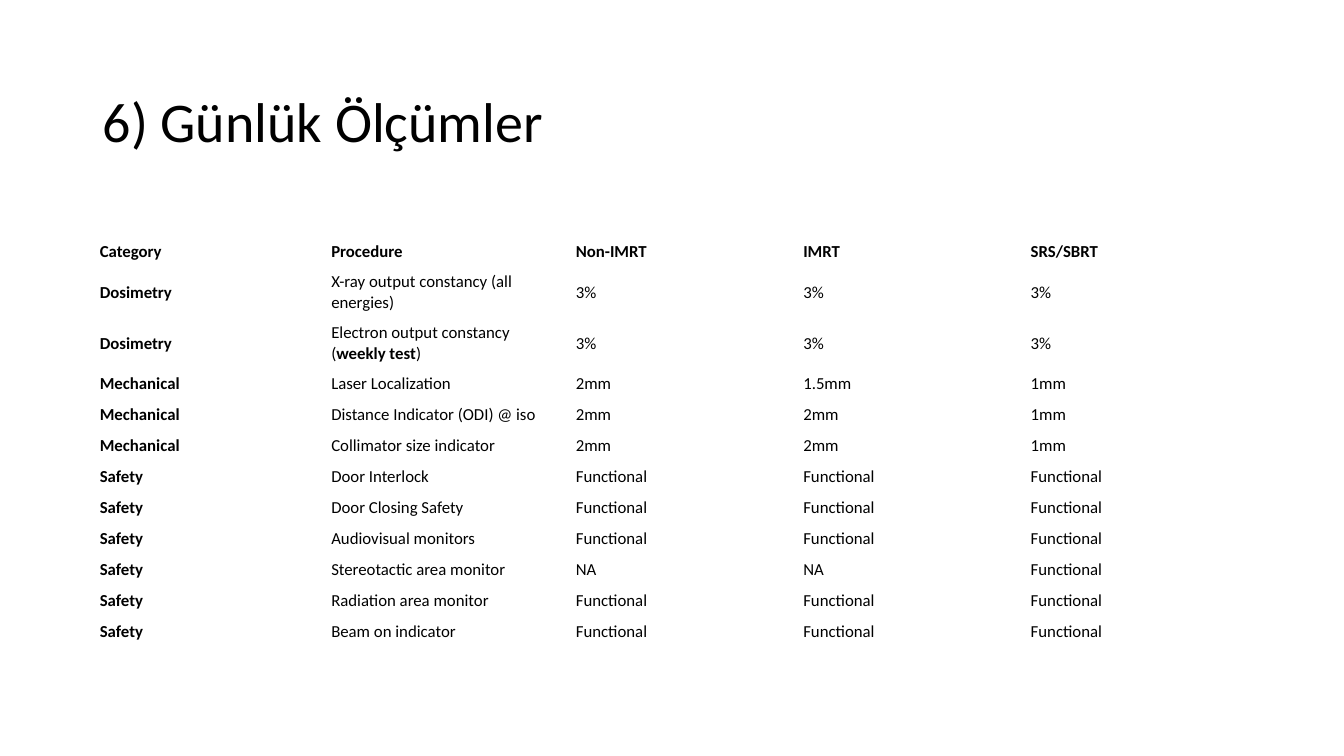
from lxml import etree
from pptx import Presentation, util as u
from pptx.dml.color import RGBColor
from pptx.enum import text
from pptx.oxml import ns

SLIDE_W, SLIDE_H = 13.33, 7.5
MARGIN = 0.92
CONTENT_W = SLIDE_W - 2 * MARGIN
BLACK, WHITE = "000000", "FFFFFF"

COLUMN_WEIGHTS = (2.3, 2.43, 2.26, 2.26, 2.26)
TALL_ROW = 1.65  # height of a two-line row, in single rows
HEADER = ("Category", "Procedure", "Non-IMRT", "IMRT", "SRS/SBRT")
FUNCTIONAL = ("Functional",) * 3

# Category, procedure as (text, bold) runs, and the three tolerances
CHECKS = [
    ("Dosimetry", [("X-ray output constancy (all energies)", False)], ("3%",) * 3),
    ("Dosimetry", [("Electron output constancy (", False), ("weekly test", True),
                   (")", False)], ("3%",) * 3),
    ("Mechanical", [("Laser Localization", False)], ("2mm", "1.5mm", "1mm")),
    ("Mechanical", [("Distance Indicator (ODI) @ iso", False)], ("2mm", "2mm", "1mm")),
    ("Mechanical", [("Collimator size indicator", False)], ("2mm", "2mm", "1mm")),
    ("Safety", [("Door Interlock", False)], FUNCTIONAL),
    ("Safety", [("Door Closing Safety", False)], FUNCTIONAL),
    ("Safety", [("Audiovisual monitors", False)], FUNCTIONAL),
    ("Safety", [("Stereotactic area monitor", False)], ("NA", "NA", "Functional")),
    ("Safety", [("Radiation area monitor", False)], FUNCTIONAL),
    ("Safety", [("Beam on indicator", False)], FUNCTIONAL),
]


def color(hex_value):
    return RGBColor.from_string(hex_value)


def apply_format(target, values):
    for name, value in values.items():
        setattr(target, name, value)


def add_run(paragraph, words, size, bold=False):
    run = paragraph.add_run()
    run.text = words
    apply_format(run.font, {"name": "Calibri", "size": u.Pt(size), "bold": bold})
    run.font.color.rgb = color(BLACK)


def set_borders(cell, hex_value, width):
    properties = cell._tc.get_or_add_tcPr()
    for index, side in enumerate(("lnL", "lnR", "lnT", "lnB")):
        line = etree.Element(ns.qn(f"a:{side}"), w=str(u.Pt(width)))
        fill = etree.SubElement(line, ns.qn("a:solidFill"))
        etree.SubElement(fill, ns.qn("a:srgbClr"), val=hex_value)
        properties.insert(index, line)


def add_title(slide, left, top, width, height):
    frame = slide.shapes.add_textbox(*map(u.Inches, (left, top, width, height))).text_frame
    apply_format(frame, {"word_wrap": True, "vertical_anchor": text.MSO_ANCHOR.MIDDLE})
    heading = frame.paragraphs[0]
    heading.line_spacing = 0.9
    add_run(heading, "6) Günlük Ölçümler", 40)


def fill_cell(cell, runs):
    apply_format(cell, {
        "vertical_anchor": text.MSO_ANCHOR.MIDDLE,
        "margin_left": u.Inches(0.07), "margin_right": u.Inches(0.07),
        "margin_top": u.Inches(0.03), "margin_bottom": u.Inches(0.03),
    })
    cell.fill.solid()
    cell.fill.fore_color.rgb = color(WHITE)
    set_borders(cell, WHITE, 0.75)
    for words, bold in runs:
        add_run(cell.text_frame.paragraphs[0], words, 12, bold)


def add_checks_table(slide, left, top, width, height):
    rows = [[[(label, True)] for label in HEADER]]
    for category, procedure, tolerances in CHECKS:
        rows.append([[(category, True)], procedure, *([(t, False)] for t in tolerances)])
    table = slide.shapes.add_table(
        len(rows), len(HEADER), *map(u.Inches, (left, top, width, height))).table
    apply_format(table, {"first_row": False, "horz_banding": False})

    # Column widths and row heights as shares of the box
    for column, weight in zip(table.columns, COLUMN_WEIGHTS):
        column.width = u.Inches(width * weight / sum(COLUMN_WEIGHTS))
    row_weights = [TALL_ROW if row[0][0][0] == "Dosimetry" else 1 for row in rows]
    for row, weight in zip(table.rows, row_weights):
        row.height = u.Inches(height * weight / sum(row_weights))

    for r, row in enumerate(rows):
        for c, runs in enumerate(row):
            fill_cell(table.cell(r, c), runs)


def main():
    deck = Presentation()
    apply_format(deck, {"slide_width": u.Inches(SLIDE_W), "slide_height": u.Inches(SLIDE_H)})
    slide = deck.slides.add_slide(deck.slide_layouts[6])
    add_title(slide, MARGIN, 0.61, CONTENT_W, 1.24)
    add_checks_table(slide, MARGIN, 2.34, CONTENT_W, 4.08)
    deck.save("out.pptx")


if __name__ == "__main__":
    main()
